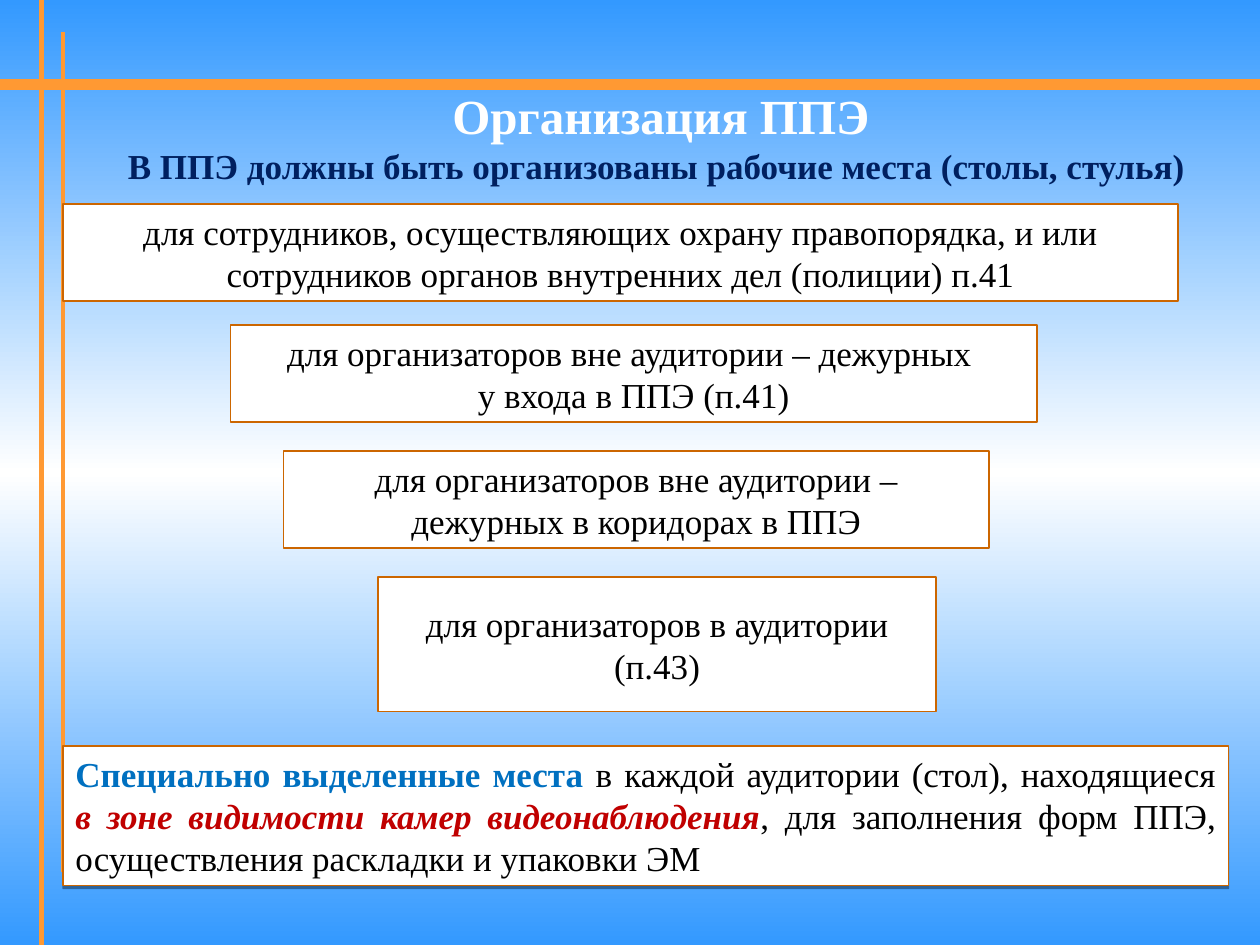
from copy import deepcopy

from lxml import etree
from pptx import Presentation
from pptx.dml.color import RGBColor
from pptx.enum import shapes, text
from pptx.oxml.ns import qn
from pptx.util import Inches, Pt

FONT = "Times New Roman"
WHITE = RGBColor(0xFF, 0xFF, 0xFF)
BLACK = RGBColor(0x00, 0x00, 0x00)
SKY = RGBColor(0x33, 0x99, 0xFF)
ORANGE = RGBColor(0xFF, 0x99, 0x33)
BROWN = RGBColor(0xCC, 0x66, 0x00)
NAVY = RGBColor(0x00, 0x20, 0x60)
BLUE = RGBColor(0x00, 0x70, 0xC0)
RED = RGBColor(0xC0, 0x00, 0x00)

CENTER = text.PP_ALIGN.CENTER
JUSTIFY = text.PP_ALIGN.JUSTIFY


def add_run(paragraph, words, size=20, color=BLACK, bold=False, italic=False):
    run = paragraph.add_run()
    run.text = words
    run.font.name = FONT
    run.font.size = Pt(size)
    run.font.color.rgb = color
    run.font.bold = bold
    run.font.italic = italic


def fill_text(frame, paragraphs, align=CENTER, anchor=text.MSO_ANCHOR.TOP, inset=0.05):
    """Write paragraphs, each a list of (words, format) runs."""
    frame.word_wrap = True
    frame.vertical_anchor = anchor
    frame.margin_top = frame.margin_bottom = Inches(inset)
    for index, runs in enumerate(paragraphs):
        paragraph = frame.add_paragraph() if index else frame.paragraphs[0]
        paragraph.alignment = align
        for words, style in runs:
            add_run(paragraph, words, **style)


def set_background(slide):
    fill = slide.background.fill
    fill.gradient()
    fill.gradient_angle = 270
    for stop in fill.gradient_stops:
        stop.color.rgb = SKY
    stops = slide.element.find(".//" + qn("a:gsLst"))
    stops.insert(1, deepcopy(stops[0]))
    for stop, position, color in zip(fill.gradient_stops, (0, 0.5, 1), (SKY, WHITE, SKY)):
        stop.position = position
        stop.color.rgb = color


def add_rule(slide, start, end, width):
    line = slide.shapes.add_connector(
        shapes.MSO_CONNECTOR.STRAIGHT, *map(Inches, start + end))
    line.line.color.rgb = ORANGE
    line.line.width = Pt(width)
    etree.SubElement(line.element.spPr, qn("a:effectLst"))


def add_frame_rules(slide):
    add_rule(slide, (0, 0.67), (10, 0.67), 6)
    add_rule(slide, (0.33, 0), (0.33, 7.5), 3)
    add_rule(slide, (0.5, 0.25), (0.5, 6.92), 2.25)


def add_heading(slide, box):
    heading = slide.shapes.add_textbox(*map(Inches, box))
    fill_text(heading.text_frame, [
        [("Организация ППЭ", dict(size=28, color=WHITE, bold=True))],
        [("В ППЭ должны быть организованы рабочие места (столы, стулья) ",
          dict(color=NAVY, bold=True))],
    ], anchor=text.MSO_ANCHOR.MIDDLE)


def add_card(slide, box, paragraphs, **text_format):
    card = slide.shapes.add_shape(shapes.MSO_SHAPE.RECTANGLE, *map(Inches, box))
    card.shadow.inherit = False
    card.fill.solid()
    card.fill.fore_color.rgb = WHITE
    card.line.color.rgb = BROWN
    card.line.width = Pt(0.75)
    fill_text(card.text_frame, paragraphs, **text_format)
    card.text_frame.auto_size = text.MSO_AUTO_SIZE.SHAPE_TO_FIT_TEXT
    return card


def add_drop_shadow(shape):
    effects = shape.element.spPr.find(qn("a:effectLst"))
    shadow = etree.SubElement(effects, qn("a:outerShdw"), blurRad="0",
                              dist=str(Pt(1.6)), dir="5400000", rotWithShape="0")
    color = etree.SubElement(shadow, qn("a:srgbClr"), val=str(BLACK))
    etree.SubElement(color, qn("a:alpha"), val="38000")


def add_workplaces(slide):
    cards = [
        ((0.5, 1.62, 8.85, 0.77), 0.05,
         ["для сотрудников, осуществляющих охрану правопорядка, и или "
          "сотрудников органов внутренних дел (полиции) п.41"]),
        ((1.83, 2.58, 6.4, 0.77), 0.05,
         ["для организаторов вне аудитории – дежурных ", "у входа в ППЭ (п.41)"]),
        ((2.25, 3.58, 5.6, 0.77), 0.05,
         ["для организаторов вне аудитории – дежурных в коридорах в ППЭ"]),
        ((3, 4.58, 4.43, 1.07), 0.2, ["для организаторов в аудитории (п.43)"]),
    ]
    for box, inset, lines in cards:
        add_card(slide, box, [[(line, {})] for line in lines], inset=inset)


def add_special_places(slide, box):
    card = add_card(slide, box, [[
        ("Специально выделенные места ", dict(color=BLUE, bold=True)),
        ("в каждой аудитории (стол), находящиеся ", {}),
        ("в зоне видимости камер видеонаблюдения",
         dict(color=RED, bold=True, italic=True)),
        (", для заполнения форм ППЭ, осуществления раскладки и упаковки ЭМ ", {}),
    ]], align=JUSTIFY)
    add_drop_shadow(card)


def main():
    presentation = Presentation()
    presentation.slide_width = Inches(10)
    presentation.slide_height = Inches(7.5)
    slide = presentation.slides.add_slide(presentation.slide_layouts[6])
    set_background(slide)
    add_frame_rules(slide)
    add_workplaces(slide)
    add_heading(slide, (0.66, 0.83, 9.17, 0.5))
    add_special_places(slide, (0.5, 5.92, 9.25, 1.11))
    presentation.save("out.pptx")


if __name__ == "__main__":
    main()
